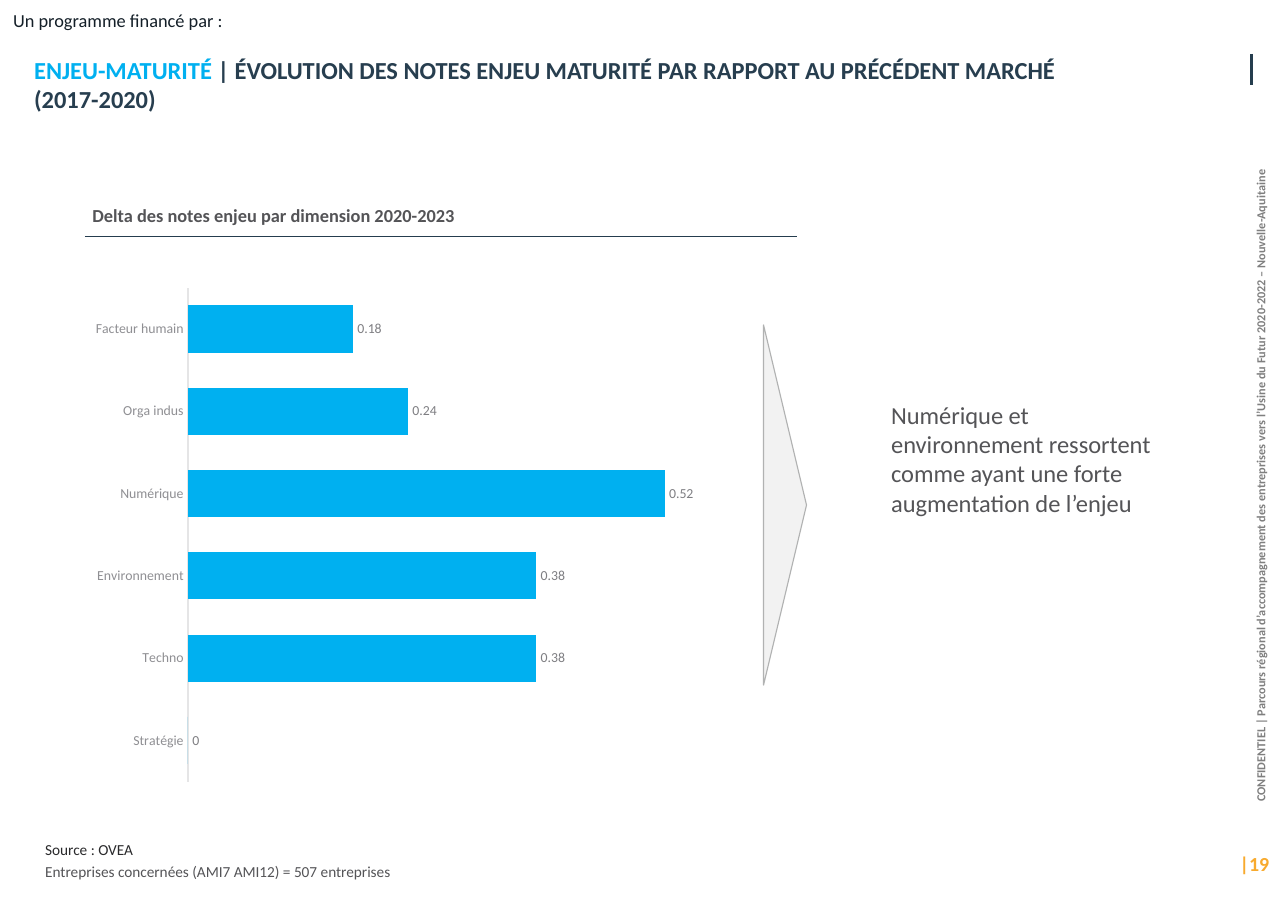
"""Build the slide on the change in stake scores per dimension."""
from lxml import etree
from pptx import Presentation
from pptx.chart.data import CategoryChartData
from pptx.dml.color import RGBColor
from pptx.enum.chart import XL_CHART_TYPE as ChartType
from pptx.enum.chart import XL_LABEL_POSITION as LabelPosition
from pptx.enum.chart import XL_TICK_MARK as TickMark
from pptx.enum.shapes import MSO_CONNECTOR as Connector
from pptx.enum.shapes import MSO_SHAPE as Shape
from pptx.enum.text import MSO_ANCHOR as Anchor
from pptx.enum.text import MSO_AUTO_SIZE as AutoSize
from pptx.enum.text import PP_ALIGN as Align
from pptx.oxml.ns import qn
from pptx.util import Inches, Pt

FONT = "Calibri"
COLORS = {
    "cyan": "00B0F0", "navy": "253D4E", "title": "273E4F", "ink": "141F28",
    "source": "2A2A2C", "text": "545457", "confidential": "7F7F7F",
    "orange": "F8AA2E", "arrow": "F2F2F2", "arrow_line": "B1B2B2",
    "axis": "E5E5E6", "category": "8F8F93", "label": "7E7E82",
}
DELTAS = {
    "Facteur humain": 0.18, "Orga indus": 0.24, "Numérique": 0.52,
    "Environnement": 0.38, "Techno": 0.38, "Stratégie": 0,
}
PLOT_AREA = {"x": 0.157, "y": 0.02, "w": 0.82, "h": 0.96}


def rgb(name):
    return RGBColor.from_string(COLORS[name])


def style_font(font, size, color, bold=False):
    font.name, font.size, font.bold = FONT, Pt(size), bold
    font.color.rgb = rgb(color)


def add_run(paragraph, text, size, color, bold=False):
    run = paragraph.add_run()
    run.text = text
    style_font(run.font, size, color, bold)


def place(shape, left, top, width, height):
    shape.left, shape.top = Inches(left), Inches(top)
    shape.width, shape.height = Inches(width), Inches(height)


def remove_insets(frame):
    frame.margin_left = frame.margin_right = 0
    frame.margin_top = frame.margin_bottom = 0


def add_text(slide, box, text, size, color, bold=False, align=Align.LEFT):
    shape = slide.shapes.add_textbox(*map(Inches, box))
    shape.text_frame.word_wrap = True
    paragraph = shape.text_frame.paragraphs[0]
    paragraph.alignment = align
    add_run(paragraph, text, size, color, bold)
    return shape


def add_line(slide, start, end, width):
    line = slide.shapes.add_connector(
        Connector.STRAIGHT, *map(Inches, start + end))
    line.line.color.rgb = rgb("navy")
    line.line.width = Pt(width)
    etree.SubElement(line._element.spPr, qn("a:effectLst"))


def fill_title(title):
    place(title, 0.31, 0.51, 9.59, 0.51)
    frame = title.text_frame
    frame.auto_size, frame.word_wrap = AutoSize.NONE, True
    frame.vertical_anchor = Anchor.MIDDLE
    remove_insets(frame)
    paragraph = frame.paragraphs[0]
    paragraph.alignment = Align.LEFT
    add_run(paragraph, "ENJEU-MATURITÉ ", 16, "cyan", True)
    add_run(paragraph, "| ÉVOLUTION DES NOTES ENJEU MATURITÉ PAR RAPPORT "
            "AU PRÉCÉDENT MARCHÉ (2017-2020)", 16, "title", True)


def fill_source(body):
    place(body, 0.31, 7.58, 7.09, 0.6)
    frame = body.text_frame
    frame.auto_size, frame.vertical_anchor = AutoSize.NONE, Anchor.TOP
    lines = [("Source : OVEA", "source"),
             ("Entreprises concernées (AMI7 AMI12) = 507 entreprises", "text")]
    for index, (text, color) in enumerate(lines):
        paragraph = frame.add_paragraph() if index else frame.paragraphs[0]
        paragraph.space_before = Pt(2 * index)
        properties = paragraph._p.get_or_add_pPr()
        properties.set("marL", "0")
        properties.set("indent", "0")
        etree.SubElement(properties, qn("a:buNone"))
        add_run(paragraph, text, 10, color)


def fix_plot_area(chart):
    plot_area = chart._chartSpace.chart.plotArea
    for old in plot_area.findall(qn("c:layout")):
        plot_area.remove(old)
    layout = etree.Element(qn("c:layout"))
    manual = etree.SubElement(layout, qn("c:manualLayout"))
    settings = {"layoutTarget": "inner", "xMode": "edge", "yMode": "edge",
                **PLOT_AREA}
    for name, value in settings.items():
        etree.SubElement(manual, qn(f"c:{name}")).set("val", str(value))
    plot_area.insert(0, layout)


def add_delta_chart(slide):
    data = CategoryChartData()
    data.categories = list(DELTAS)
    data.add_series("Series 1", list(DELTAS.values()))
    box = map(Inches, (0.75, 2.52, 6.09, 4.67))
    chart = slide.shapes.add_chart(ChartType.BAR_CLUSTERED, *box, data).chart
    chart.has_legend = chart.has_title = False
    style_font(chart.font, 10, "text")

    categories = chart.category_axis
    categories.reverse_order = True
    categories.major_tick_mark = categories.minor_tick_mark = TickMark.NONE
    categories.format.line.color.rgb = rgb("axis")
    categories.format.line.width = Pt(0.75)
    style_font(categories.tick_labels.font, 9, "category")

    values = chart.value_axis
    values.minimum_scale, values.maximum_scale = 0, 0.6
    values.has_major_gridlines = values.visible = False

    plot = chart.plots[0]
    plot.gap_width, plot.vary_by_categories = 75, False
    series = plot.series[0]
    series.format.fill.solid()
    series.format.fill.fore_color.rgb = rgb("cyan")
    labels = series.data_labels
    labels.show_value = True
    labels.position = LabelPosition.OUTSIDE_END
    style_font(labels.font, 9, "label")
    fix_plot_area(chart)


def add_arrow(slide):
    box = map(Inches, (5.49, 4.39, 3.27, 0.39))
    arrow = slide.shapes.add_shape(Shape.ISOSCELES_TRIANGLE, *box)
    arrow.rotation = 90
    arrow.shadow.inherit = False
    arrow.fill.solid()
    arrow.fill.fore_color.rgb = rgb("arrow")
    arrow.line.color.rgb = rgb("arrow_line")
    arrow.line.width = Pt(0.75)


def add_confidential_note(slide):
    note = add_text(
        slide, (8.17, 4.25, 6.54, 0.32),
        "CONFIDENTIEL | Parcours régional d’accompagnement des entreprises "
        "vers l’Usine du Futur 2020-2022 – Nouvelle-Aquitaine",
        8, "confidential", True, Align.CENTER)
    note.rotation = 270
    note.text_frame.vertical_anchor = Anchor.MIDDLE
    remove_insets(note.text_frame)


def main():
    presentation = Presentation()
    presentation.slide_width = Inches(11.69)
    presentation.slide_height = Inches(8.27)
    slide = presentation.slides.add_slide(presentation.slide_layouts[1])

    fill_title(slide.shapes.title)
    fill_source(slide.placeholders[1])
    add_confidential_note(slide)
    add_line(slide, (11.36, 0.49), (11.36, 0.77), 1.5)
    add_text(slide, (0.02, 0.03, 2.32, 0.23),
             "Un programme financé par :", 12, "ink")
    add_text(slide, (11.06, 7.68, 0.65, 0.44), "|19", 13, "orange", True,
             Align.CENTER)
    add_text(slide, (7.99, 3.58, 2.73, 1.18),
             "Numérique et environnement ressortent comme ayant une forte "
             "augmentation de l’enjeu", 16, "text")
    add_arrow(slide)
    add_line(slide, (0.77, 2.15), (7.23, 2.15), 0.75)
    add_text(slide, (0.74, 1.8, 4.21, 0.3),
             "Delta des notes enjeu par dimension 2020-2023", 12, "text", True)
    add_delta_chart(slide)
    presentation.save("out.pptx")


if __name__ == "__main__":
    main()
